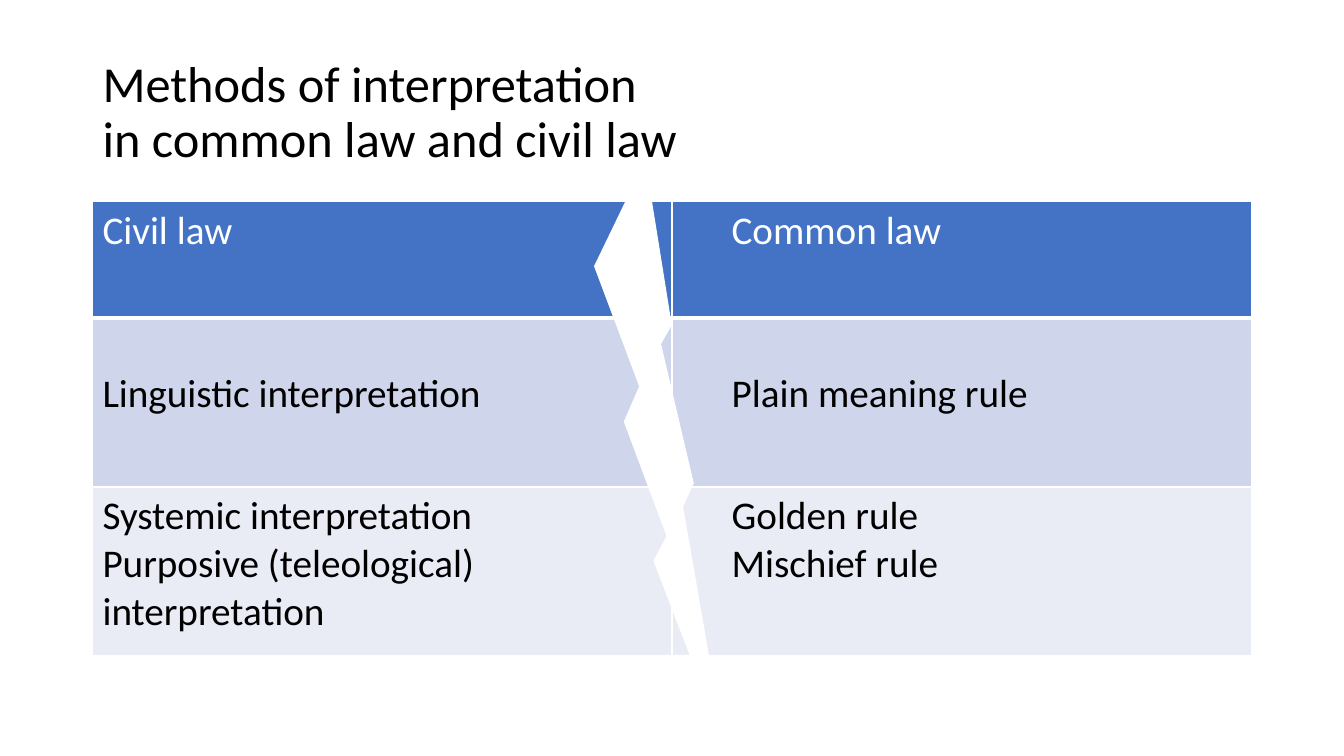
from dataclasses import dataclass

from lxml.etree import SubElement
from pptx import Presentation
from pptx.dml.color import RGBColor
from pptx.enum.shapes import MSO_SHAPE
from pptx.enum.text import MSO_ANCHOR, MSO_AUTO_SIZE, PP_ALIGN
from pptx.oxml.ns import qn
from pptx.slide import Slide
from pptx.table import _Cell
from pptx.text.text import _Paragraph
from pptx.util import Cm, Pt

FONT = "Calibri"
WHITE = "FFFFFF"
BLACK = "000000"
LEFT, WIDTH = Cm(2.33), Cm(29.21)
COMMON_LAW_INDENT = Cm(1.25)


@dataclass
class MethodRow:
    civil: list[str]
    common: list[str]
    height: float
    fill: str
    color: str = BLACK
    top_margin: float = 0.13
    bottom_border: float = 1


ROWS = [
    MethodRow(["Civil law"], ["Common law"], 2.93, "4472C4", WHITE, bottom_border=3),
    MethodRow(["Linguistic interpretation"], ["Plain meaning rule"], 4.26, "CFD5EA",
              top_margin=1.33),
    MethodRow(["Systemic interpretation", "Purposive (teleological) interpretation"],
              ["Golden rule", "Mischief rule"], 4.26, "E9EBF5"),
]


def rgb(value: str) -> RGBColor:
    return RGBColor.from_string(value)


def add_run(p: _Paragraph, text: str, size: float, color: str) -> None:
    r = p.add_run()
    r.text = text
    r.font.name = FONT
    r.font.size = Pt(size)
    r.font.color.rgb = rgb(color)


def set_border(cell: _Cell, side: str, width: float) -> None:
    ln = SubElement(cell._tc.get_or_add_tcPr(), qn(f"a:ln{side}"), w=str(Pt(width)))
    SubElement(SubElement(ln, qn("a:solidFill")), qn("a:srgbClr"), val=WHITE)


def fill_cell(cell: _Cell, lines: list[str], row: MethodRow, indent: int) -> None:
    for side in "LRT":
        set_border(cell, side, 1)
    set_border(cell, "B", row.bottom_border)
    cell.fill.solid()
    cell.fill.fore_color.rgb = rgb(row.fill)
    cell.margin_top = Cm(row.top_margin)
    tf = cell.text_frame
    for i, line in enumerate(lines):
        p = tf.add_paragraph() if i else tf.paragraphs[0]
        pPr = p._p.get_or_add_pPr()
        pPr.set("marL", str(indent))
        pPr.set("indent", "0")
        add_run(p, line, 28, row.color)


def add_title(s: Slide) -> None:
    title = s.shapes.title
    title.left, title.top, title.width, title.height = LEFT, Cm(1.02), WIDTH, Cm(3.68)
    tf = title.text_frame
    tf.word_wrap = True
    tf.auto_size = MSO_AUTO_SIZE.NONE
    tf.vertical_anchor = MSO_ANCHOR.MIDDLE
    p = tf.paragraphs[0]
    p.alignment = PP_ALIGN.LEFT
    p.line_spacing = 0.9
    add_run(p, "Methods of interpretation", 36, BLACK)
    p.add_line_break()
    add_run(p, "in common law and civil law", 36, BLACK)


def add_methods_table(s: Slide) -> None:
    height = Cm(sum(row.height for row in ROWS))
    table = s.shapes.add_table(len(ROWS), 2, LEFT, Cm(5.08), WIDTH, height).table
    for i, row in enumerate(ROWS):
        table.rows[i].height = Cm(row.height)
        fill_cell(table.cell(i, 0), row.civil, row, 0)
        fill_cell(table.cell(i, 1), row.common, row, COMMON_LAW_INDENT)


def add_dividing_bolt(s: Slide) -> None:
    sp = s.shapes.add_shape(MSO_SHAPE.LIGHTNING_BOLT,
                            Cm(14.99), Cm(4.09), Cm(3.23), Cm(14.55))
    sp.shadow.inherit = False
    sp.fill.solid()
    sp.fill.fore_color.rgb = rgb(WHITE)
    sp.line.color.rgb = rgb(WHITE)
    sp.line.width = Pt(1)


def main() -> None:
    prs = Presentation()
    prs.slide_width, prs.slide_height = Cm(33.87), Cm(19.05)
    s = prs.slides.add_slide(prs.slide_layouts[5])
    add_title(s)
    add_methods_table(s)
    add_dividing_bolt(s)
    prs.save("out.pptx")


if __name__ == "__main__":
    main()
